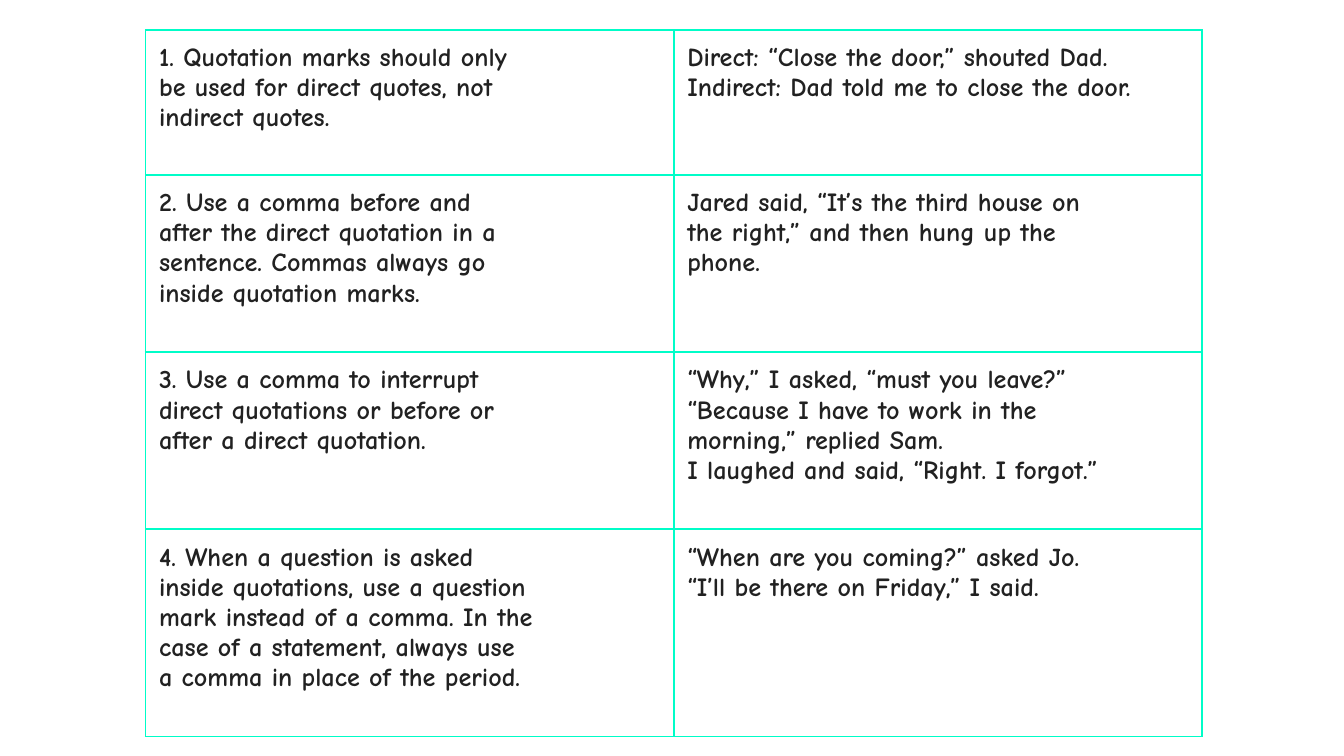
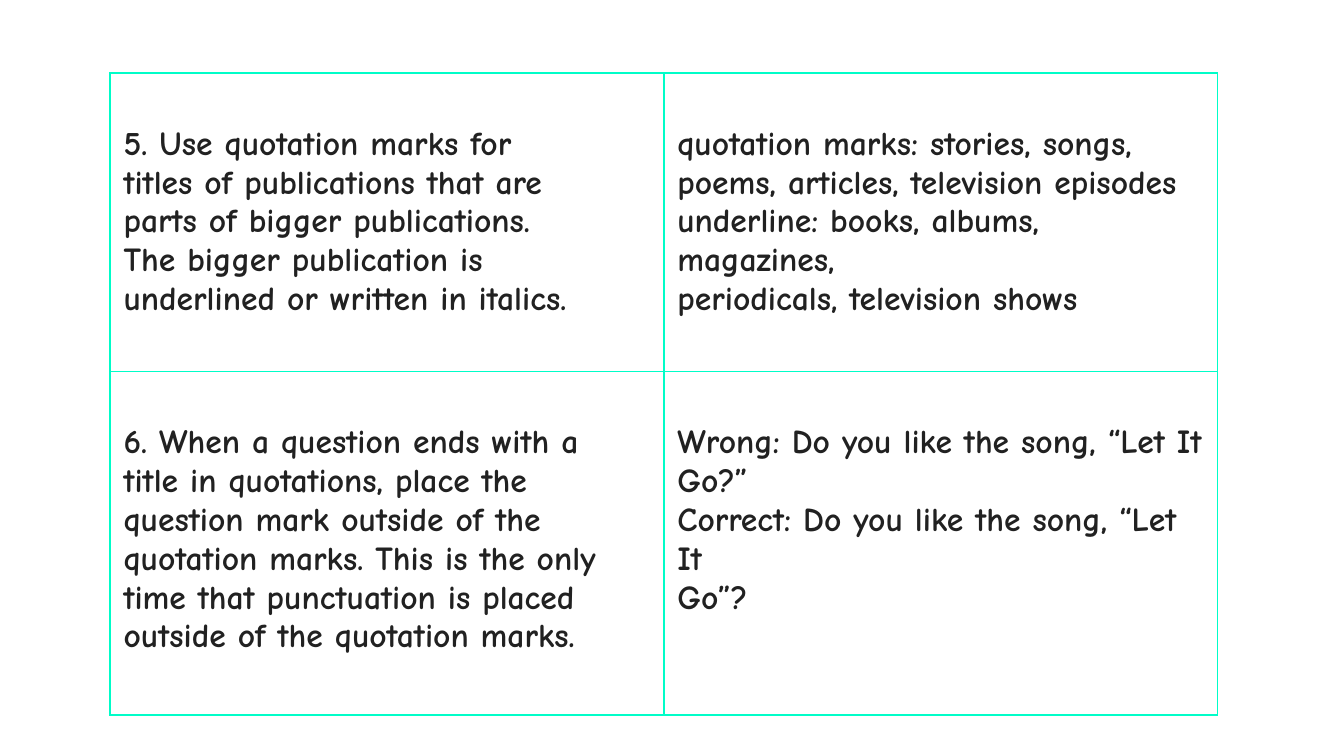
from pptx import Presentation
from pptx.dml.color import RGBColor
from pptx.oxml.ns import qn
from pptx.util import Pt
from lxml.etree import SubElement

FONT = "Comic Neue"
INK = RGBColor(0x21, 0x21, 0x21)
MINT = RGBColor(0x00, 0xFD, 0xC8)
INSET = 7.2
BORDER = 1

PUNCTUATION_RULES = [
    ("""1. Quotation marks should only
be used for direct quotes, not
indirect quotes.""",
     """Direct: “Close the door,” shouted Dad.
Indirect: Dad told me to close the door."""),
    ("""2. Use a comma before and
after the direct quotation in a
sentence. Commas always go
inside quotation marks.""",
     """Jared said, “It’s the third house on
the right,” and then hung up the
phone."""),
    ("""3. Use a comma to interrupt
direct quotations or before or
after a direct quotation.""",
     """“Why,” I asked, “must you leave?”
“Because I have to work in the
morning,” replied Sam.
I laughed and said, “Right. I forgot.”"""),
    ("""4. When a question is asked
inside quotations, use a question
mark instead of a comma. In the
case of a statement, always use
a comma in place of the period.""",
     """“When are you coming?” asked Jo.
“I’ll be there on Friday,” I said."""),
]

TITLE_RULES = [
    ("""5. Use quotation marks for
titles of publications that are
parts of bigger publications.
The bigger publication is
underlined or written in italics.""",
     """quotation marks: stories, songs,
poems, articles, television episodes
underline: books, albums, magazines,
periodicals, television shows"""),
    ("""6. When a question ends with a
title in quotations, place the
question mark outside of the
quotation marks. This is the only
time that punctuation is placed
outside of the quotation marks.""",
     """Wrong: Do you like the song, “Let It
Go?”
Correct: Do you like the song, “Let It
Go”?"""),
]


def write(tf, text, *, size, color=INK, bold=True):
    """Put each line of text in its own paragraph."""
    tf.word_wrap = True
    for i, line in enumerate(text.splitlines()):
        p = tf.add_paragraph() if i else tf.paragraphs[0]
        r = p.add_run()
        r.text = line
        r.font.name = FONT
        r.font.size = Pt(size)
        r.font.bold = bold
        r.font.color.rgb = color


def outline(cell, color=MINT, width=BORDER):
    tc_pr = cell._tc.get_or_add_tcPr()
    for side in ("L", "R", "T", "B"):
        ln = SubElement(tc_pr, qn(f"a:ln{side}"), w=str(Pt(width)))
        fill = SubElement(ln, qn("a:solidFill"))
        SubElement(fill, qn("a:srgbClr"), val=str(color))


def rules_slide(prs, rules, *, left, top, width, heights, size, drop=0):
    """Add a slide with rules beside examples; drop lowers the text in each cell."""
    s = prs.slides.add_slide(prs.slide_layouts[6])
    columns = len(rules[0])
    table = s.shapes.add_table(len(rules), columns, Pt(left), Pt(top),
                               Pt(width), Pt(sum(heights))).table
    table.first_row = table.horz_banding = False
    for column in table.columns:
        column.width = Pt(width / columns)
    for row, height, texts in zip(table.rows, heights, rules):
        row.height = Pt(height)
        for cell, text in zip(row.cells, texts):
            outline(cell)
            cell.fill.background()
            cell.margin_left = cell.margin_right = cell.margin_bottom = Pt(INSET)
            cell.margin_top = Pt(INSET + drop)
            write(cell.text_frame, text, size=size)


def main():
    prs = Presentation()
    prs.slide_width, prs.slide_height = Pt(720), Pt(405)
    rules_slide(prs, PUNCTUATION_RULES, left=78, top=16, width=566,
                heights=(77.7, 94.9, 94.9, 111.2), size=14)
    rules_slide(prs, TITLE_RULES, left=59, top=39, width=593.4,
                heights=(160, 184), size=18, drop=20.8)
    prs.save("out.pptx")


if __name__ == "__main__":
    main()
